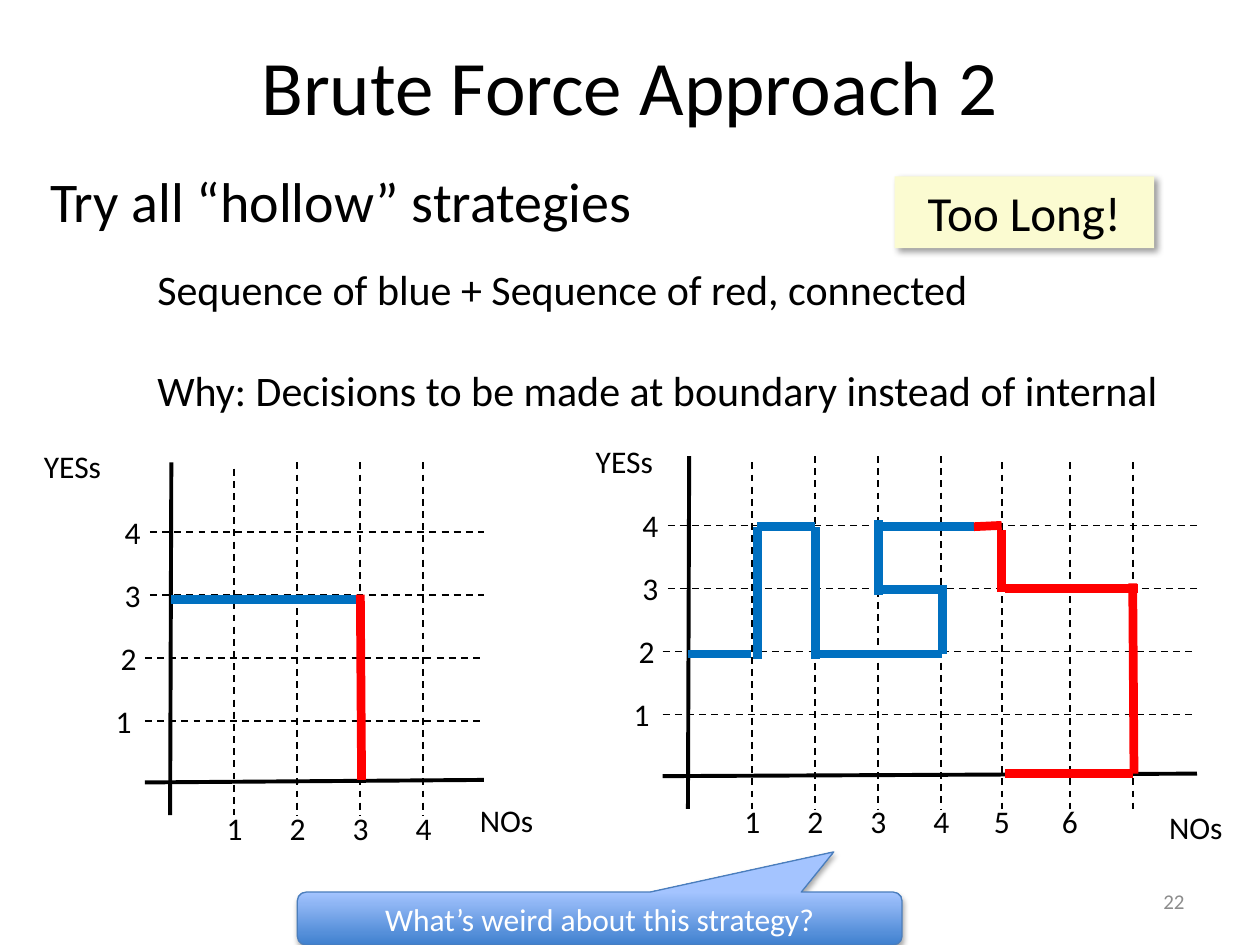
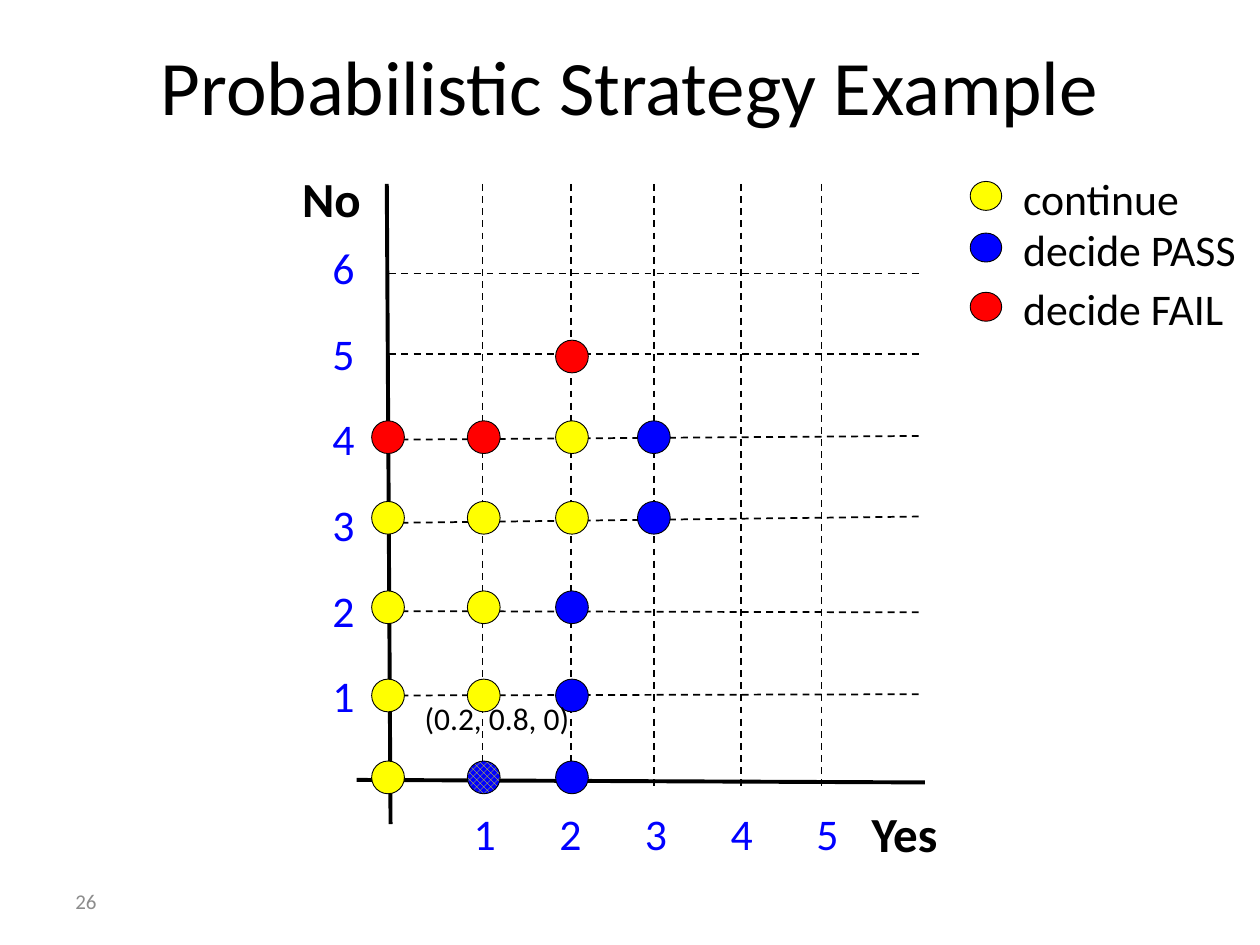
from lxml import etree
from pptx import Presentation
from pptx.dml.color import RGBColor
from pptx.enum.dml import MSO_LINE, MSO_PATTERN
from pptx.enum.shapes import MSO_CONNECTOR, MSO_SHAPE
from pptx.enum.text import MSO_ANCHOR, MSO_AUTO_SIZE, PP_ALIGN
from pptx.oxml.ns import qn
from pptx.util import Inches, Pt

DASH, STRAIGHT = MSO_LINE.DASH, MSO_CONNECTOR.STRAIGHT
LARGE_CHECK = MSO_PATTERN.LARGE_CHECKER_BOARD
RECT, OVAL = MSO_SHAPE.RECTANGLE, MSO_SHAPE.OVAL
CALLOUT = MSO_SHAPE.ROUNDED_RECTANGULAR_CALLOUT
TOP, MIDDLE = MSO_ANCHOR.TOP, MSO_ANCHOR.MIDDLE
LEFT, CENTER, RIGHT = PP_ALIGN.LEFT, PP_ALIGN.CENTER, PP_ALIGN.RIGHT
FIT = MSO_AUTO_SIZE.SHAPE_TO_FIT_TEXT

W, H = 10, 7.5
FONT = "Calibri"
BLACK, WHITE, GREY = "000000", "FFFFFF", "8C8C8C"
YELLOW, BLUE, RED = "FFFF00", "0000FF", "FF0000"
PATH_BLUE, NOTE = "0070C0", "FBFBD1"


# Basic parts
def rgb(value):
    return RGBColor.from_string(value)


def write(tf, lines, size, color=BLACK, align=LEFT, bold=False, gap=0):
    """Fill a text frame with one paragraph per line, gap points apart."""
    for i, line_text in enumerate(lines):
        p = tf.paragraphs[0] if i == 0 else tf.add_paragraph()
        p.alignment = align
        p.space_before = Pt(gap if i else 0)
        r = p.add_run()
        r.text = line_text
        for name, value in dict(name=FONT, size=Pt(size), bold=bold).items():
            setattr(r.font, name, value)
        r.font.color.rgb = rgb(color)


def text(s, box, lines, size, wrap=True, anchor=TOP, inset=None, **style):
    sp = s.shapes.add_textbox(*map(Inches, box))
    tf = sp.text_frame
    tf.word_wrap, tf.vertical_anchor = wrap, anchor
    if not wrap:
        tf.auto_size = FIT
    if inset:
        for side, value in zip(("left", "top", "right", "bottom"), inset * 2):
            setattr(tf, "margin_" + side, Inches(value))
    write(tf, lines, size, **style)


def label(s, x, y, w, h, value, size, **style):
    text(s, (x, y, w, h), [str(value)], size, wrap=False, **style)


def line(s, at, ends, color=BLACK, width=1.0, dash=False):
    """Draw a line whose ends are measured from the point at."""
    x, y = at
    x1, y1, x2, y2 = ends
    c = s.shapes.add_connector(
        STRAIGHT, *map(Inches, (x + x1, y + y1, x + x2, y + y2)))
    c.line.color.rgb = rgb(color)
    c.line.width = Pt(width)
    if dash:
        c.line.dash_style = DASH
    etree.SubElement(c._element.spPr, qn("a:effectLst"))


def shape(s, kind, box, fill=None, outline=None, width=0.5):
    sp = s.shapes.add_shape(kind, *map(Inches, box))
    sp.shadow.inherit = False
    if fill:
        sp.fill.solid()
        sp.fill.fore_color.rgb = rgb(fill)
    if outline:
        sp.line.color.rgb = rgb(outline)
        sp.line.width = Pt(width)
    else:
        sp.line.fill.background()
    return sp


def cast_shadow(sp, alpha, blur, dist, angle):
    effects = sp._element.spPr.find(qn("a:effectLst"))
    shadow = etree.SubElement(
        effects, qn("a:outerShdw"), blurRad=str(Pt(blur)), dist=str(Pt(dist)),
        dir=str(angle * 60000), algn="tl", rotWithShape="0")
    color = etree.SubElement(shadow, qn("a:srgbClr"), val=BLACK)
    etree.SubElement(color, qn("a:alpha"), val=str(alpha * 1000))


def new_slide(prs, title, number, number_x, number_align):
    s = prs.slides.add_slide(prs.slide_layouts[6])
    text(s, (0.05 * W, 0.02 * H, 0.9 * W, 0.14 * H), [title], 44,
         anchor=MIDDLE, align=CENTER)
    text(s, (number_x, 6.95, 2.33, 0.4), [number], 12,
         anchor=MIDDLE, color=GREY, align=number_align)
    return s


# Slide with two hollow strategies
def strategy_grid(s, at, columns, labelled, right, yes_at, no_at, paths):
    """Grid with its vertical axis starting at the point at."""
    x, y = at
    line(s, at, (0, 0, -0.01, 2.8), width=2.25)
    line(s, at, (-0.21, 2.54, right, 2.52), width=2.25)
    for n, dx in enumerate(columns, 1):
        line(s, at, (dx, 0 if n in (2, 3, 4) else 0.05, dx, 2.8), dash=True)
        if n <= labelled:
            label(s, x + dx - 0.16, y + 2.7, 0.33, 0.4, n, 18)
    for n in range(1, 5):
        dy = 2.55 - 0.5 * n
        line(s, at, (-0.21 if n < 3 else -0.17, dy, right, dy), dash=True)
        label(s, x - min(0.47, 0.58) - (0.07, 0.03, 0, 0)[n - 1],
              y + dy - 0.2, 0.33, 0.4, n, 18)
    label(s, x + no_at[0], y + no_at[1], 0.82, 0.51, "NOs", 18)
    label(s, x + yes_at[0], y + yes_at[1], 0.97, 0.5, "YESs", 18)
    for color, segments in paths.items():
        for ends in segments:
            line(s, at, ends, color, 5)


def note_box(s, box):
    sp = shape(s, RECT, box, NOTE)
    cast_shadow(sp, 40, 4, 3, 45)
    sp.text_frame.vertical_anchor = TOP
    write(sp.text_frame, ["Too Long!"], 28, align=CENTER)


def question_callout(s, box):
    sp = shape(s, CALLOUT, box, outline="4B7EBC", width=0.75)
    for i, value in enumerate((0.387, -1.26, 0.167)):
        sp.adjustments[i] = value
    sp.fill.gradient()
    sp.fill.gradient_angle = 90
    for stop, color in zip(sp.fill.gradient_stops, ("3F80CE", "A4C4FF")):
        stop.color.rgb = rgb(color)
    cast_shadow(sp, 35, 3.1, 1.8, 90)
    sp.text_frame.vertical_anchor = MIDDLE
    write(sp.text_frame, ["What’s weird about this strategy?"], 18,
          WHITE, CENTER)


def brute_force_slide(prs):
    s = new_slide(prs, "Brute Force Approach 2", "22", 7.17, RIGHT)
    text(s, (0.3, 1.27, 6.5, 0.7), ["Try all “hollow” strategies"], 32)
    note_box(s, (7.1, 1.4, 2.06, 0.57))
    winding = {
        PATH_BLUE: [
            (0.54, 1.61, 0.54, 0.56), (-0.01, 1.57, 0.49, 1.57),
            (1, 1.61, 1, 0.56), (0.54, 0.56, 1, 0.56),
            (1.04, 1.57, 2.01, 1.57), (2.01, 1.57, 2.01, 1.06),
            (1.54, 1.06, 2.05, 1.06), (1.5, 1.1, 1.5, 0.51),
            (1.54, 0.56, 2.26, 0.56)],
        RED: [
            (2.51, 2.52, 3.52, 2.52), (3.53, 2.52, 3.52, 1.01),
            (2.51, 1.05, 3.56, 1.05), (2.26, 0.56, 2.48, 0.55),
            (2.48, 1.08, 2.48, 0.59)]}
    simple = {PATH_BLUE: [(0, 1.09, 1.5, 1.09)],
              RED: [(1.51, 2.52, 1.5, 1.05)]}
    even = [0.5 * n for n in range(1, 5)]
    strategy_grid(s, (5.47, 3.62), even + [2.48, 3.02, 3.52], 6, 4.03,
                  (-0.84, -0.16), (3.71, 2.74), winding)
    strategy_grid(s, (1.36, 3.67), even, 4, 2.48,
                  (-1.11, -0.17), (2.35, 2.64), simple)
    text(s, (1.15, 2.04, 8.35, 1.31),
         ["Sequence of blue + Sequence of red, connected",
          "Why: Decisions to be made at boundary instead of internal"],
         24, gap=29)
    question_callout(s, (2.36, 7.08, 4.8, 0.42))


# Slide with a probabilistic strategy
DOT_COLORS = {"c": YELLOW, "p": BLUE, "f": RED}
DOT_ROWS = ("c?p", "ccp", "ccp", "cccp", "ffcp", "  f")
DOT_X = (0.01, 0.77, 1.47, 2.12)
DOT_Y = (4.71, 4.06, 3.36, 2.65, 2.01, 1.37)
COLUMN_X = (0.76, 1.46, 2.12, 2.81, 3.45)
ROW_Y = ((4.06, 4.05), (3.39, 3.4), (2.69, 2.64), (2.03, 2),
         (1.35, 1.35), (0.71, 0.71))


def decision_dots(s, at, d=0.26):
    for row, dy in zip(DOT_ROWS, DOT_Y):
        for mark, dx in zip(row, DOT_X):
            if mark == " ":
                continue
            sp = shape(s, OVAL, (at[0] + dx - d / 2, at[1] + dy - d / 2, d, d),
                       DOT_COLORS.get(mark), BLACK)
            if mark == "?":
                sp.fill.patterned()
                sp.fill.pattern = LARGE_CHECK
                sp.fill.fore_color.rgb = rgb(YELLOW)
                sp.fill.back_color.rgb = rgb(BLUE)


def decision_grid(s, at):
    x, y = at
    step = 0.68
    line(s, at, (0, 0, 0.03, 5.08), width=2.25)
    line(s, at, (-0.24, 4.73, 4.27, 4.75), width=2.25)
    for n, dx in enumerate(COLUMN_X):
        line(s, at, (dx, 0, dx, 4.78), dash=True)
        label(s, x + 0.59 + n * step, y + 4.89, 0.38, 0.52, n + 1, 25,
              color=BLUE)
    for n, (y1, y2) in enumerate(ROW_Y):
        line(s, at, (0.02, y1, 4.22, y2), dash=True)
        label(s, x - 0.53, y + 3.8 - n * step, 0.38, 0.52, n + 1, 25,
              color=BLUE)
    label(s, x + 3.75, y + 4.87, 0.77, 0.57, "Yes", 28, bold=True)
    label(s, x - 0.77, y - 0.17, 0.67, 0.57, "No", 28, bold=True)
    decision_dots(s, at)
    text(s, (x + 0.23, y + 4.05, 1.99, 0.37), ["(0.2, 0.8, 0)"], 18,
         inset=(0.07, 0.04))


def legend(s, x, y):
    entries = (("continue", YELLOW, 0, 1.54), ("decide PASS", BLUE, 0.41, 2.02),
               ("decide FAIL", RED, 0.88, 1.91))
    for name, color, dy, w in entries:
        label(s, x + 0.28, y + dy, w, 0.56, name, 25, inset=(0.14, 0.07))
        shape(s, OVAL, (x, y + dy + 0.15, 0.25, 0.23), color, BLACK)


def probabilistic_slide(prs):
    s = new_slide(prs, "Probabilistic Strategy Example", "26", 0.5, LEFT)
    decision_grid(s, (3.07, 1.46))
    legend(s, 7.7, 1.29)


def main():
    prs = Presentation()
    prs.slide_width, prs.slide_height = Inches(W), Inches(H)
    brute_force_slide(prs)
    probabilistic_slide(prs)
    prs.save("out.pptx")


if __name__ == "__main__":
    main()
